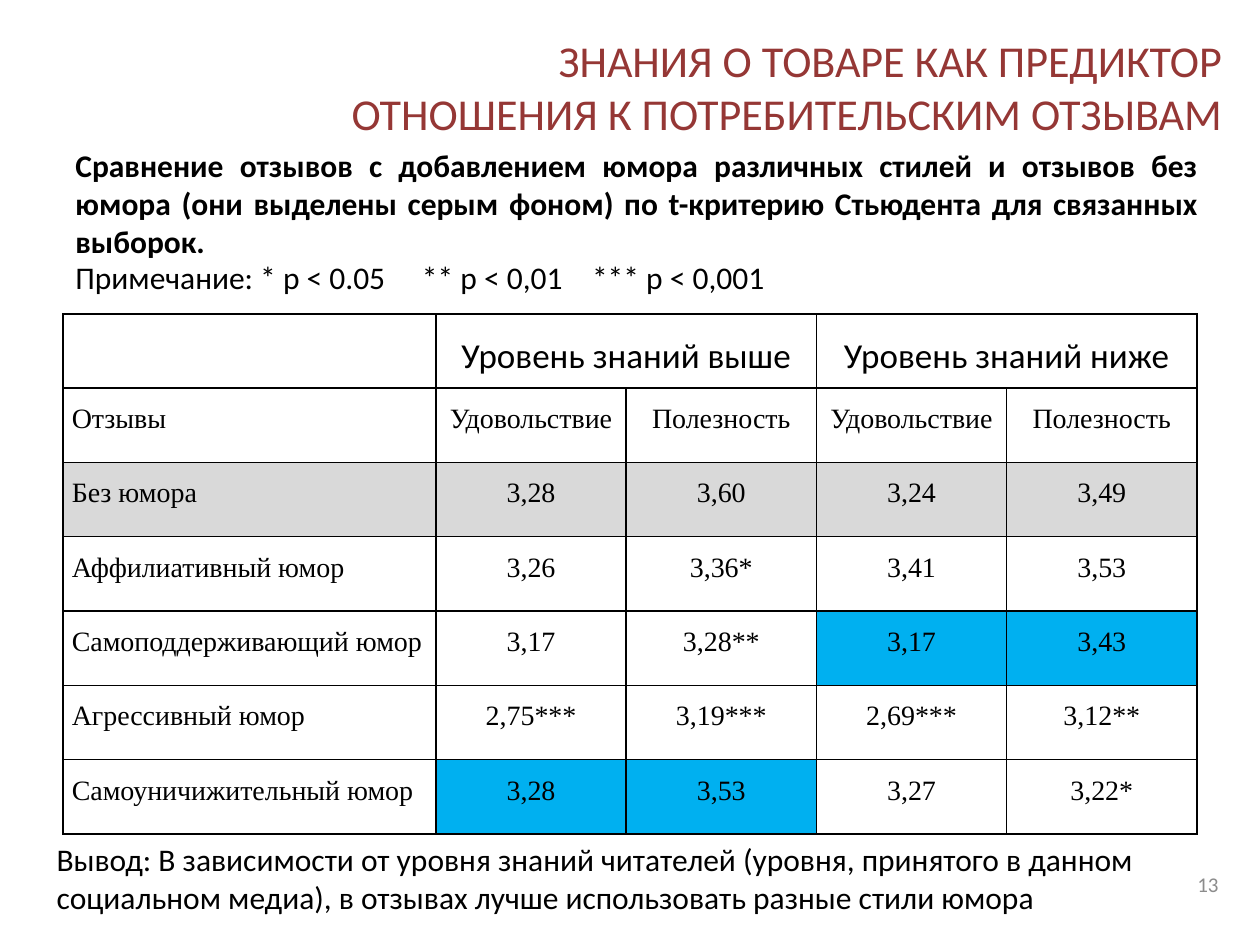
from dataclasses import dataclass

from lxml.etree import SubElement
from pptx import Presentation
from pptx.dml.color import RGBColor
from pptx.enum.text import MSO_ANCHOR, PP_ALIGN
from pptx.oxml.ns import qn
from pptx.slide import Slide
from pptx.table import _Cell
from pptx.text.text import _Paragraph
from pptx.util import Inches, Pt

COLORS = {
    "title": "953735",
    "text": "000000",
    "number": "8C8C8C",
    "baseline": "D9D9D9",
    "highlight": "00B0F0",
}
HEADINGS = {1: "Уровень знаний выше", 3: "Уровень знаний ниже"}
MEASURES = ("Удовольствие", "Полезность")
COLUMN_WIDTHS = (2.96, 1.51, 1.51, 1.51, 1.51)
ROW_HEIGHT = 0.59


@dataclass(frozen=True)
class TextStyle:
    size: float
    font: str = "Calibri"
    color: str = "text"
    bold: bool = False


@dataclass(frozen=True)
class TextBlock:
    left: float
    top: float
    width: float
    height: float
    text: str
    style: TextStyle
    align: PP_ALIGN = PP_ALIGN.LEFT
    anchor: MSO_ANCHOR = MSO_ANCHOR.TOP
    tabs: tuple[float, ...] = ()


@dataclass(frozen=True)
class ReviewRow:
    label: str
    values: tuple[str, ...]
    fill: str = ""
    filled_columns: tuple[int, ...] = ()


BODY = TextStyle(18)
HEADING = TextStyle(20)
CELL = TextStyle(16, "Times New Roman")

BLOCKS = (
    TextBlock(2.56, 0.3, 7.24, 0.77,
              "ЗНАНИЯ О ТОВАРЕ КАК ПРЕДИКТОР ОТНОШЕНИЯ К ПОТРЕБИТЕЛЬСКИМ ОТЗЫВАМ",
              TextStyle(25.2, color="title"), PP_ALIGN.RIGHT, MSO_ANCHOR.MIDDLE),
    TextBlock(7.44, 6.82, 2.33, 0.4, "13",
              TextStyle(12, color="number"), PP_ALIGN.RIGHT, MSO_ANCHOR.MIDDLE),
    TextBlock(0.35, 6.62, 9.15, 0.71,
              "Вывод: В зависимости от уровня знаний читателей (уровня, принятого в данном "
              "социальном медиа), в отзывах лучше использовать разные стили юмора", BODY),
    TextBlock(0.5, 1.11, 9.11, 1.01,
              "Сравнение отзывов с добавлением юмора различных стилей и отзывов без юмора "
              "(они выделены серым фоном) по t-критерию Стьюдента для связанных выборок.",
              TextStyle(18, bold=True), PP_ALIGN.JUSTIFY),
    TextBlock(0.5, 2, 6.65, 0.4,
              "Примечание: * p < 0.05\t** p < 0,01\t*** p < 0,001", BODY, tabs=(2.75, 4.1)),
)

ROWS = (
    ReviewRow("Отзывы", MEASURES * 2),
    ReviewRow("Без юмора", ("3,28", "3,60", "3,24", "3,49"), "baseline", (0, 1, 2, 3, 4)),
    ReviewRow("Аффилиативный юмор", ("3,26", "3,36*", "3,41", "3,53")),
    ReviewRow("Самоподдерживающий юмор", ("3,17", "3,28**", "3,17", "3,43"), "highlight", (3, 4)),
    ReviewRow("Агрессивный юмор", ("2,75***", "3,19***", "2,69***", "3,12**")),
    ReviewRow("Самоуничижительный юмор", ("3,28", "3,53", "3,27", "3,22*"), "highlight", (1, 2)),
)


def add_span(para: _Paragraph, text: str, style: TextStyle) -> None:
    span = para.add_run()
    span.text = text
    span.font.name = style.font
    span.font.size = Pt(style.size)
    span.font.bold = style.bold
    span.font.color.rgb = RGBColor.from_string(COLORS[style.color])


def add_tabs(para: _Paragraph, positions: tuple[float, ...]) -> None:
    tab_list = SubElement(para._p.get_or_add_pPr(), qn("a:tabLst"))
    for position in positions:
        SubElement(tab_list, qn("a:tab"), pos=str(Inches(position)), algn="l")


def add_block(page: Slide, block: TextBlock) -> None:
    box = page.shapes.add_textbox(Inches(block.left), Inches(block.top),
                                  Inches(block.width), Inches(block.height))
    frame = box.text_frame
    frame.word_wrap = True
    frame.vertical_anchor = block.anchor
    para = frame.paragraphs[0]
    para.alignment = block.align
    if block.tabs:
        add_tabs(para, block.tabs)
    add_span(para, block.text, block.style)


def format_cell(cell: _Cell, fill: str = "") -> None:
    properties = cell._tc.get_or_add_tcPr()
    for side in ("lnL", "lnR", "lnT", "lnB"):
        border = SubElement(properties, qn(f"a:{side}"), w=str(Pt(1)))
        solid = SubElement(border, qn("a:solidFill"))
        SubElement(solid, qn("a:srgbClr"), val=COLORS["text"])
    if fill:
        cell.fill.solid()
        cell.fill.fore_color.rgb = RGBColor.from_string(COLORS[fill])
    else:
        cell.fill.background()


def write_cell(cell: _Cell, text: str, style: TextStyle, align: PP_ALIGN) -> None:
    cell.margin_left = cell.margin_right = Inches(0.07)
    cell.margin_top = cell.margin_bottom = Inches(0)
    para = cell.text_frame.paragraphs[0]
    para.alignment = align
    para.line_spacing = 1.5
    para.space_after = Pt(10)
    add_span(para, text, style)


def add_review_table(page: Slide) -> None:
    row_count = len(ROWS) + 1
    table = page.shapes.add_table(row_count, len(COLUMN_WIDTHS), Inches(0.5), Inches(2.49),
                                  Inches(sum(COLUMN_WIDTHS)),
                                  Inches(ROW_HEIGHT * row_count)).table
    table.first_row = False
    table.horz_banding = False
    for column, width in zip(table.columns, COLUMN_WIDTHS):
        column.width = Inches(width)
    for row in table.rows:
        row.height = Inches(ROW_HEIGHT)
    for column_index in range(len(COLUMN_WIDTHS)):
        format_cell(table.cell(0, column_index))
    for column_index, heading in HEADINGS.items():
        cell = table.cell(0, column_index)
        cell.merge(table.cell(0, column_index + 1))
        write_cell(cell, heading, HEADING, PP_ALIGN.CENTER)
    for row_index, review in enumerate(ROWS, start=1):
        for column_index, text in enumerate((review.label, *review.values)):
            cell = table.cell(row_index, column_index)
            format_cell(cell, review.fill if column_index in review.filled_columns else "")
            write_cell(cell, text, CELL, PP_ALIGN.CENTER if column_index else PP_ALIGN.JUSTIFY)


def main() -> None:
    deck = Presentation()
    deck.slide_width = Inches(10)
    deck.slide_height = Inches(7.5)
    page = deck.slides.add_slide(deck.slide_layouts[6])
    add_review_table(page)
    for block in BLOCKS:
        add_block(page, block)
    deck.save("out.pptx")


if __name__ == "__main__":
    main()
